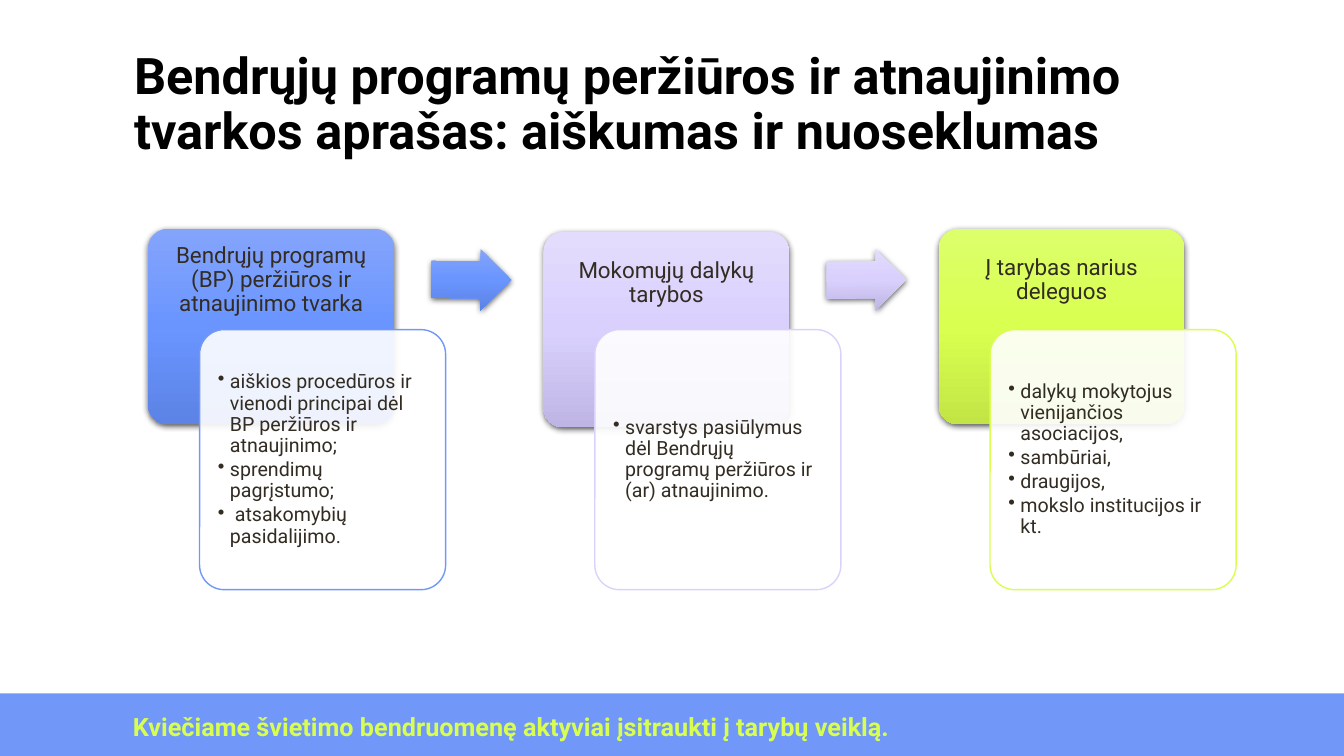
from lxml import etree
from pptx import Presentation
from pptx.dml.color import RGBColor
from pptx.enum.shapes import MSO_SHAPE
from pptx.enum.text import MSO_ANCHOR, PP_ALIGN
from pptx.oxml import parse_xml
from pptx.oxml.ns import qn
from pptx.util import Inches, Pt

RECT, ROUND, ARROW = MSO_SHAPE.RECTANGLE, MSO_SHAPE.ROUNDED_RECTANGLE, MSO_SHAPE.RIGHT_ARROW
MIDDLE, LEFT, CENTER = MSO_ANCHOR.MIDDLE, PP_ALIGN.LEFT, PP_ALIGN.CENTER
NS = 'xmlns:a="http://schemas.openxmlformats.org/drawingml/2006/main"'
HEX = {"black": "000000", "text": "322C23", "white": "FFFFFF", "blue": "7198F8", "lime": "D8FE51",
       "lilac": "DAD2FB"}
WIDE, HIGH = 13.33, 7.5

# Columns: heading, bullets, outline, gradient, heading top, arrow turn
STEPS = [
    ("Bendrųjų programų (BP) peržiūros ir atnaujinimo tvarka",
     ["aiškios procedūros ir vienodi principai dėl BP peržiūros ir atnaujinimo;",
      "sprendimų pagrįstumo;", " atsakomybių pasidalijimo."],
     "blue", ("84A4FB", "6A95FF", "5C83E5"), 2.27, 0.4),
    ("Mokomųjų dalykų tarybos",
     ["svarstys pasiūlymus dėl Bendrųjų programų peržiūros ir (ar) atnaujinimo."],
     "lilac", ("E3DCFC", "D9D0FD", "BEB5E5"), 2.3, -0.5),
    ("Į tarybas narius deleguos",
     ["dalykų mokytojus vienijančios asociacijos,", "sambūriai,", "draugijos,",
      "mokslo institucijos ir kt."],
     "lime", ("DCFF6C", "D9FF50", "C2E545"), 2.27, None),
]
START, PITCH, BOX = 1.47, 3.92, 2.44

deck = Presentation()
deck.slide_width, deck.slide_height = Inches(WIDE), Inches(HIGH)
slide = deck.slides.add_slide(deck.slide_layouts[6])


def write(shape, lines, size, color, pad, bold=False, align=LEFT, space=1.0, after=0, bullet=False):
    frame = shape.text_frame
    frame.word_wrap = True
    frame.vertical_anchor = MIDDLE
    (frame.margin_left, frame.margin_top,
     frame.margin_right, frame.margin_bottom) = [Inches(n) for n in pad]
    for i, line in enumerate(lines):
        para = frame.add_paragraph() if i else frame.paragraphs[0]
        para.text = line
        if bullet:
            props = para._p.get_or_add_pPr()
            props.set("marL", str(Inches(0.12)))
            props.set("indent", str(-Inches(0.12)))
            etree.SubElement(props, qn("a:buChar")).set("char", "•")
        para.alignment, para.line_spacing, para.space_after = align, space, Pt(after)
        font = para.font
        font.name, font.size, font.bold = "Roboto", Pt(size), bold
        font.color.rgb = RGBColor.from_string(HEX[color])


def block(kind, left, top, width, height, shades=None):
    shape = slide.shapes.add_shape(kind, Inches(left), Inches(top), Inches(width), Inches(height))
    shape.shadow.inherit = False
    shape.line.fill.background()
    if shades:
        shape.fill.gradient()
        stops = "".join(f'<a:gs pos="{i * 50000}"><a:srgbClr val="{c}"/></a:gs>'
                        for i, c in enumerate(shades))
        props = shape._element.spPr
        props.replace(props.find(qn("a:gradFill")), parse_xml(
            f'<a:gradFill {NS} rotWithShape="1"><a:gsLst>{stops}</a:gsLst>'
            '<a:lin ang="5400000" scaled="0"/></a:gradFill>'))
        props.find(qn("a:effectLst")).append(parse_xml(
            f'<a:outerShdw {NS} blurRad="{Pt(4.5)}" dist="{Pt(1.5)}" dir="5400000" algn="ctr" '
            'rotWithShape="0"><a:srgbClr val="000000"><a:alpha val="63000"/></a:srgbClr>'
            '</a:outerShdw>'))
    return shape


# Title
title = slide.shapes.add_textbox(Inches(1.33), Inches(0.38), Inches(10.44), Inches(1.34))
write(title, ["Bendrųjų programų peržiūros ir atnaujinimo tvarkos aprašas: aiškumas ir nuoseklumas"],
      36, "black", [0] * 4, bold=True, space=0.9)

# Steps
for col, (name, points, edge, shades, top, turn) in enumerate(STEPS):
    left = START + col * PITCH
    head = block(ROUND, left, top, BOX, 1.94, shades)
    head.adjustments[0] = 0.1
    write(head, [name], 16, "text", (0.06, 0.06, 0.06, 0.98), align=CENTER, space=0.9, after=5.6)

    card = block(ROUND, left + 0.51, 3.27, BOX, 2.58)
    card.adjustments[0] = 0.1
    card.fill.solid()
    card.fill.fore_color.rgb = RGBColor.from_string(HEX["white"])
    tint = card._element.spPr.find(qn("a:solidFill"))[0]
    etree.SubElement(tint, qn("a:alpha")).set("val", "90000")
    card.line.color.rgb = RGBColor.from_string(HEX[edge])
    card.line.width = Pt(1)
    write(card, points, 14, "text", [0.11] * 4, space=0.9, after=2.1, bullet=True)

    if turn is not None:
        arrow = block(ARROW, left + 2.81, 2.47, 0.79, 0.61, shades)
        arrow.adjustments[0], arrow.adjustments[1] = 0.6, 0.5
        arrow.rotation = turn

# Footer band
band = block(RECT, 0, 6.88, WIDE, HIGH - 6.88)
band.fill.solid()
band.fill.fore_color.rgb = RGBColor.from_string(HEX["blue"])
call = slide.shapes.add_textbox(Inches(1.22), Inches(7.01), Inches(9.16), Inches(0.4))
write(call, ["Kviečiame švietimo bendruomenę aktyviai įsitraukti į tarybų veiklą."],
      18, "lime", (0.1, 0.05, 0.1, 0.05), bold=True)

deck.save("out.pptx")
